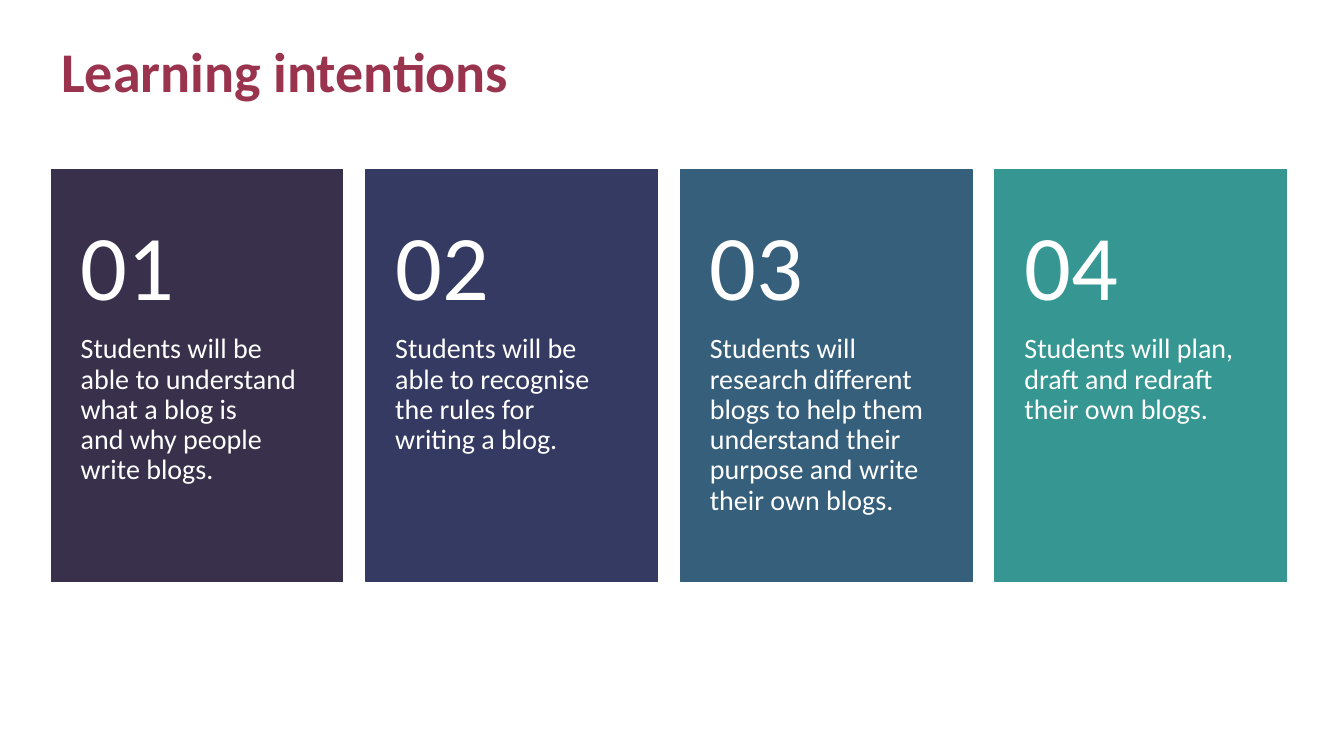
from pptx import Presentation
from pptx.dml.color import RGBColor
from pptx.enum.shapes import MSO_SHAPE
from pptx.enum.text import MSO_ANCHOR, PP_ALIGN
from pptx.util import Inches, Pt

WHITE = RGBColor(0xFF, 0xFF, 0xFF)
CRIMSON = RGBColor(0x9A, 0x33, 0x4D)
PLUM = RGBColor(0x39, 0x30, 0x4C)
NAVY = RGBColor(0x34, 0x3A, 0x62)
STEEL = RGBColor(0x36, 0x5F, 0x7B)
TEAL = RGBColor(0x36, 0x96, 0x91)

LEFT = 0.51
CARD_WIDTH = 2.89
CARD_PITCH = 3.12

INTENTIONS = [
    (PLUM, "Students will be able to understand what a blog is\vand why people write blogs."),
    (NAVY, "Students will be able to recognise the rules for\vwriting a blog."),
    (STEEL, "Students will research different blogs to help them understand "
            "their purpose and write their own blogs."),
    (TEAL, "Students will plan, draft and redraft\vtheir own blogs."),
]

deck = Presentation()
deck.slide_width = Inches(13.33)
deck.slide_height = Inches(7.5)
page = deck.slides.add_slide(deck.slide_layouts[6])


def add_text(text, place, insets, size, color, anchor, bold=False):
    box = page.shapes.add_textbox(*[Inches(length) for length in place])
    frame = box.text_frame
    frame.word_wrap = True
    frame.vertical_anchor = anchor
    (frame.margin_left, frame.margin_top,
     frame.margin_right, frame.margin_bottom) = [Inches(inset) for inset in insets]
    frame.text = text
    para = frame.paragraphs[0]
    para.alignment = PP_ALIGN.LEFT
    para.line_spacing = 0.9
    for span in para.runs:
        span.font.name = "Calibri"
        span.font.size = Pt(size)
        span.font.bold = bold
        span.font.color.rgb = color


add_text("Learning intentions", (LEFT, 0.4, 11.5, 0.68), (0.1, 0.05, 0.1, 0.05),
         40, CRIMSON, MSO_ANCHOR.MIDDLE, bold=True)

for index, (color, intention) in enumerate(INTENTIONS):
    left = LEFT + index * CARD_PITCH
    card = page.shapes.add_shape(MSO_SHAPE.RECTANGLE, Inches(left), Inches(1.68),
                                 Inches(CARD_WIDTH), Inches(4.09))
    card.shadow.inherit = False
    card.fill.solid()
    card.fill.fore_color.rgb = color
    card.line.color.rgb = color
    card.line.width = Pt(1)
    add_text(intention, (left, 3.32, CARD_WIDTH, 2.45), (0.29, 0, 0.29, 0.36),
             20, WHITE, MSO_ANCHOR.TOP)
    add_text(f"{index + 1:02d}", (left, 1.99, CARD_WIDTH, 1.39), (0.29, 0.18, 0.29, 0.18),
             66, WHITE, MSO_ANCHOR.MIDDLE)

deck.save("out.pptx")
